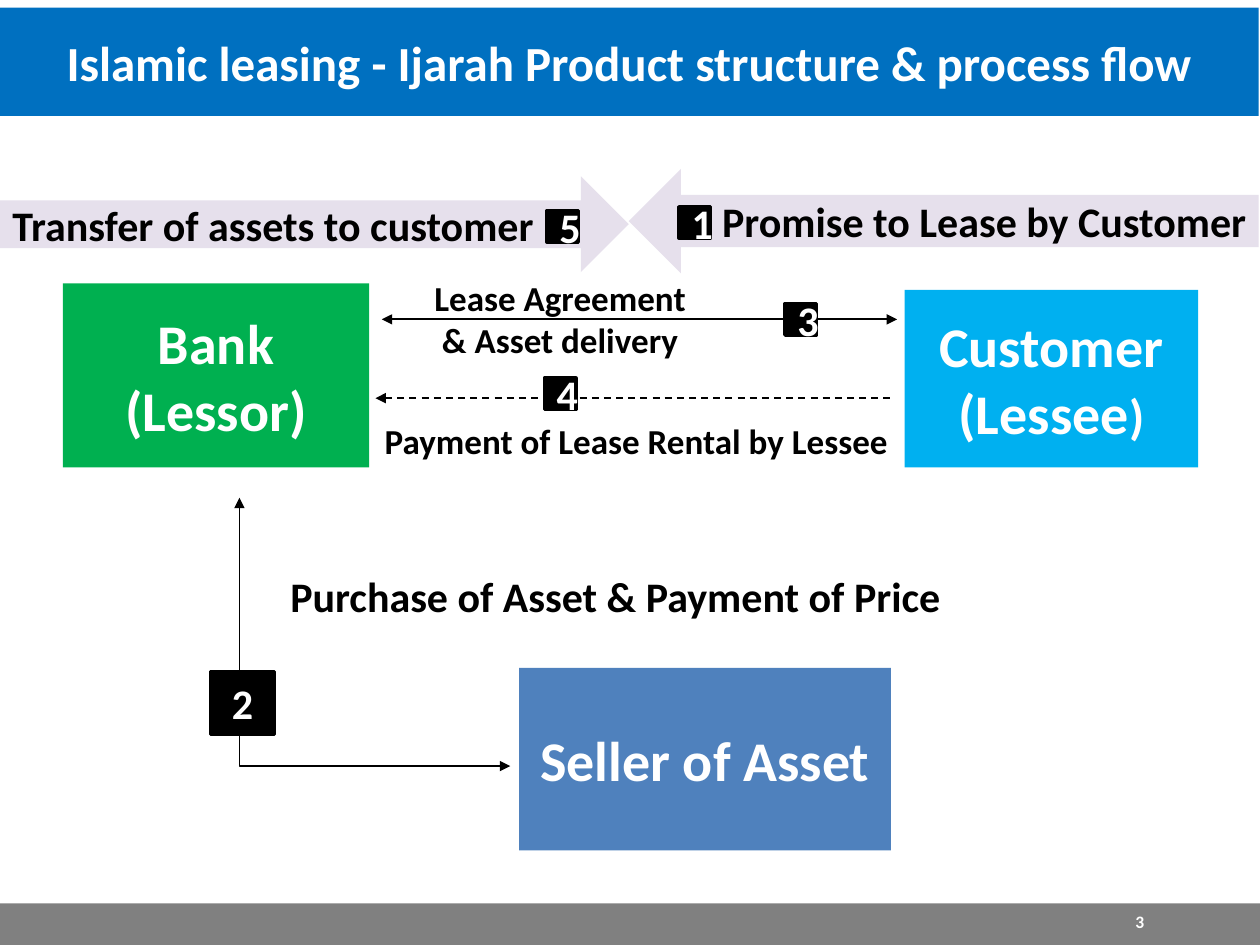
from lxml import etree
from pptx import Presentation
from pptx import util as u
from pptx.dml.color import RGBColor
from pptx.enum import dml, shapes, text
from pptx.oxml.ns import qn

WHITE = RGBColor(0xFF, 0xFF, 0xFF)
BLACK = RGBColor(0, 0, 0)
GREY = RGBColor(0x80, 0x80, 0x80)
LILAC = RGBColor(0xE6, 0xE0, 0xEC)
GREEN = RGBColor(0x00, 0xB0, 0x50)
SKY = RGBColor(0x00, 0xB0, 0xF0)
STEEL = RGBColor(0x4F, 0x81, 0xBD)
BLUE = RGBColor(0x00, 0x70, 0xC0)

COLUMNS, ROWS = 100, 75
LEFT, CENTER, RIGHT = (
    text.PP_ALIGN.LEFT, text.PP_ALIGN.CENTER, text.PP_ALIGN.RIGHT)
PRESET = shapes.MSO_SHAPE


class FlowPage:
    """Places flow chart elements by the columns and rows of a fine grid."""

    font_name = "Calibri"

    def __init__(self, deck):
        self.page = deck.slides.add_slide(deck.slide_layouts[5])
        self.cell_width = deck.slide_width / COLUMNS
        self.cell_height = deck.slide_height / ROWS

    def lengths(self, *cells):
        """Turn alternating columns and rows into slide lengths."""
        units = (self.cell_width, self.cell_height)
        return [round(cell * units[i % 2]) for i, cell in enumerate(cells)]

    def set_words(self, box, words, size, color, align=CENTER):
        frame = box.text_frame
        frame.word_wrap = True
        frame.auto_size = text.MSO_AUTO_SIZE.NONE
        frame.vertical_anchor = text.MSO_ANCHOR.MIDDLE
        frame.text = words
        for para in frame.paragraphs:
            para.alignment = align
            font = para.font
            font.name, font.size, font.bold = self.font_name, u.Pt(size), True
            font.color.rgb = color

    def title(self, place, words):
        box = self.page.shapes.title
        box.left, box.top, box.width, box.height = self.lengths(*place)
        box.fill.solid()
        box.fill.fore_color.rgb = BLUE
        self.set_words(box, words, 28, WHITE)

    def block(self, place, fill, words="", size=32, color=WHITE,
              align=CENTER, preset=PRESET.RECTANGLE):
        box = self.page.shapes.add_shape(preset, *self.lengths(*place))
        box.shadow.inherit = False
        box.fill.solid()
        box.fill.fore_color.rgb = fill
        box.line.fill.background()
        if words:
            self.set_words(box, words, size, color, align)
        return box

    def badge(self, column, row, number, width=2.5, height=2.5):
        box = self.block((column, row, width, height), BLACK, number, 24)
        box.line.color.rgb = BLACK
        box.line.width = u.Pt(2)

    def label(self, place, words, size=20, color=BLACK):
        box = self.page.shapes.add_textbox(*self.lengths(*place))
        self.set_words(box, words, size, color)

    def arrow(self, start, end, ends=("headEnd", "tailEnd"), dashed=False):
        link = self.page.shapes.add_connector(
            shapes.MSO_CONNECTOR.STRAIGHT, *self.lengths(*start, *end))
        link.line.color.rgb = BLACK
        link.line.width = u.Pt(1)
        if dashed:
            link.line.dash_style = dml.MSO_LINE.DASH
        properties = link._element.spPr
        outline = properties.find(qn("a:ln"))
        for name in ends:
            etree.SubElement(outline, qn("a:" + name), type="triangle")
        etree.SubElement(properties, qn("a:effectLst"))
        return link

    def corner_arrow(self, top_left, bottom_right):
        """Run from the bottom right along the bottom, then up the left."""
        properties = self.arrow(top_left, bottom_right)._element.spPr
        properties.find(qn("a:xfrm")).set("rot", str(180 * 60000))
        properties.find(qn("a:prstGeom")).set("prst", "bentConnector2")


def main():
    deck = Presentation()
    deck.slide_width, deck.slide_height = u.Inches(10), u.Inches(7.5)
    flow = FlowPage(deck)

    flow.title((-0.1, 0.6, 100, 8.6),
               "Islamic leasing - Ijarah Product structure & process flow")
    flow.block((0, 71.7, 100, 3.3), GREY)
    flow.label((84.2, 71.9, 12.5, 2.5), "3", 10, WHITE)

    flow.block((49.9, 13.4, 50, 8.3), LILAC, "Promise to Lease by Customer",
               24, BLACK, RIGHT, PRESET.LEFT_ARROW)
    flow.block((0, 14, 49.9, 7.6), LILAC, "Transfer of assets to customer",
               24, BLACK, LEFT, PRESET.RIGHT_ARROW)

    flow.block((5, 22.5, 24.3, 14.6), GREEN, "Bank\n(Lessor)")
    customer = flow.block((71.8, 23, 23.3, 14.1), SKY, "Customer\n(Lessee")
    bracket = customer.text_frame.paragraphs[1].add_run()
    bracket.text = ")"
    bracket.font.size = u.Pt(28)
    flow.block((41.2, 53, 29.5, 14.5), STEEL, "Seller of Asset")

    flow.corner_arrow((19, 39.5), (40.5, 60.8))
    flow.arrow((30.3, 25.35), (71.2, 25.35))
    flow.arrow((29.8, 31.6), (70.6, 31.6), ends=("headEnd",), dashed=True)

    flow.label((21.8, 44.1, 54.1, 6.4),
               "Purchase of Asset & Payment of Price", 24)
    flow.label((32.5, 23.7, 23.9, 3.1), "Lease Agreement & Asset delivery")
    flow.label((29.2, 33.3, 42.6, 3.4), "Payment of Lease Rental by Lessee")

    flow.badge(53.9, 16.4, "1")
    flow.badge(16.7, 53.3, "2", 5.1, 5)
    flow.badge(62.3, 24.1, "3")
    flow.badge(43.2, 30, "4")
    flow.badge(43.4, 16.7, "5")

    deck.save("out.pptx")


if __name__ == "__main__":
    main()
